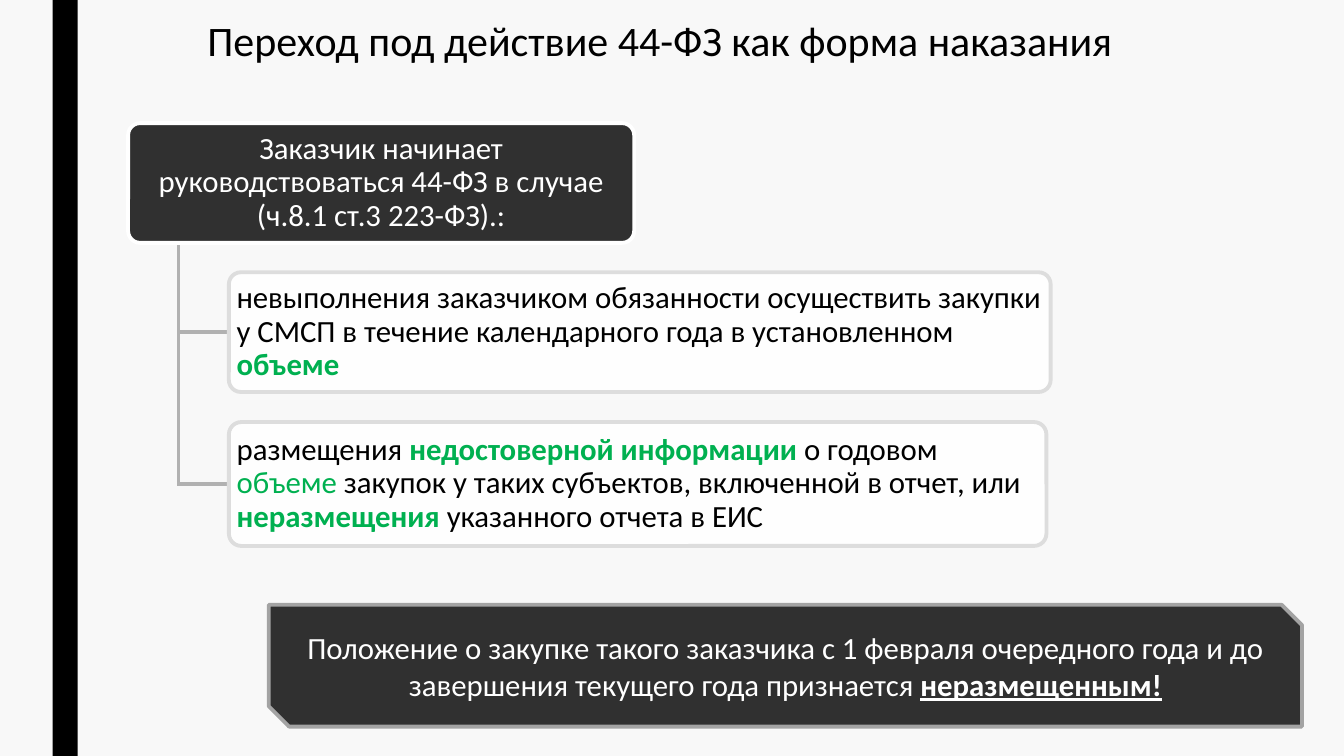
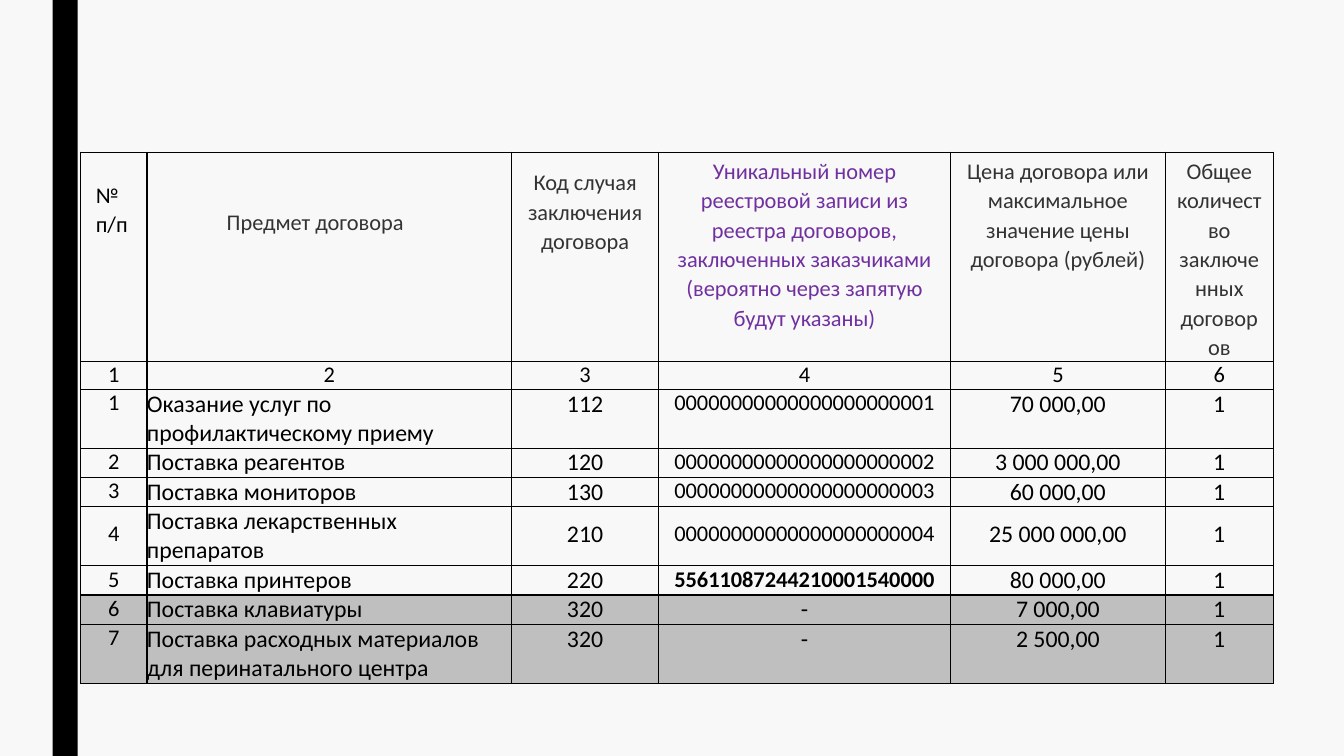
from dataclasses import dataclass

from lxml import etree
from pptx import Presentation
from pptx.dml.color import RGBColor
from pptx.enum.shapes import MSO_CONNECTOR, MSO_SHAPE
from pptx.enum.text import MSO_ANCHOR, PP_ALIGN
from pptx.oxml import parse_xml
from pptx.oxml.ns import nsdecls, qn
from pptx.util import Pt

LEFT, CENTER = PP_ALIGN.LEFT, PP_ALIGN.CENTER
MIDDLE = MSO_ANCHOR.MIDDLE
RECT, ROUNDED, SNIPPED = (MSO_SHAPE.RECTANGLE, MSO_SHAPE.ROUNDED_RECTANGLE,
                          MSO_SHAPE.SNIP_2_DIAG_RECTANGLE)
STRAIGHT = MSO_CONNECTOR.STRAIGHT


@dataclass(frozen=True)
class Theme:
    font: str = "Calibri"
    background: RGBColor = RGBColor(0xF8, 0xF8, 0xF8)
    black: RGBColor = RGBColor(0, 0, 0)
    white: RGBColor = RGBColor(0xFF, 0xFF, 0xFF)
    dark: RGBColor = RGBColor(0x30, 0x30, 0x30)
    case_fill: RGBColor = RGBColor(0xFE, 0xFE, 0xFE)
    case_line: RGBColor = RGBColor(0xDD, 0xDD, 0xDD)
    branch: RGBColor = RGBColor(0xB1, 0xB1, 0xB1)
    note_line: RGBColor = RGBColor(0xA3, 0xA3, 0xA3)
    green: RGBColor = RGBColor(0, 0xB0, 0x50)
    heading: RGBColor = RGBColor(0x33, 0x33, 0x33)
    purple: RGBColor = RGBColor(0x70, 0x30, 0xA0)
    gray_row: RGBColor = RGBColor(0xBF, 0xBF, 0xBF)
    title_size: int = 30
    body_size: int = 22
    cell_size: int = 17
    small_size: int = 16
    line: float = 2.75


theme = Theme()


def add_panel(s, kind, box, fill, line, color, runs, align=LEFT, spacing=0.9):
    """Add a filled shape with text; run marks: g green, b bold, u underlined."""
    sp = s.shapes.add_shape(kind, *(Pt(v) for v in box))
    sp.shadow.inherit = False
    sp.fill.solid()
    sp.fill.fore_color.rgb = fill
    sp.line.color.rgb = line
    sp.line.width = Pt(theme.line)
    tf = sp.text_frame
    tf.word_wrap = True
    tf.vertical_anchor = MIDDLE
    p = tf.paragraphs[0]
    p.alignment = align
    p.line_spacing = spacing
    p.font.name = theme.font
    p.font.size = Pt(theme.body_size)
    for text, marks in runs:
        r = p.add_run()
        r.text = text
        r.font.color.rgb = theme.green if "g" in marks else color
        if "b" in marks:
            r.font.bold = True
        if "u" in marks:
            r.font.underline = True
    if kind == ROUNDED:
        sp.adjustments[0] = 0.1
        tf.margin_left = tf.margin_right = Pt(3)
        tf.margin_top = tf.margin_bottom = Pt(2)
    return sp


def add_borders(cell):
    tc_pr = cell._tc.get_or_add_tcPr()
    for i, side in enumerate(("lnL", "lnR", "lnT", "lnB")):
        tc_pr.insert(i, parse_xml(
            f'<a:{side} {nsdecls("a")} w="{Pt(1)}"><a:solidFill>'
            f'<a:srgbClr val="{theme.black}"/></a:solidFill></a:{side}>'))


prs = Presentation()
prs.slide_width, prs.slide_height = Pt(960), Pt(540)
blank = prs.slide_layouts[6]

# Shared background and band
master = prs.slide_master
master.background.fill.solid()
master.background.fill.fore_color.rgb = theme.background
s = prs.slides.add_slide(blank)
band = s.shapes.add_shape(RECT, Pt(37.5), 0, Pt(18), Pt(540))
band.shadow.inherit = False
band.fill.solid()
band.fill.fore_color.rgb = theme.black
band.line.fill.background()
band.element.nvSpPr.cNvPr.set("id", "100")
master.shapes.element.append(band.element)

# Slide 1: title
tf = s.shapes.add_textbox(Pt(141), Pt(11.5), Pt(819), Pt(58)).text_frame
tf.word_wrap = True
p = tf.paragraphs[0]
p.text = "Переход под действие 44-ФЗ как форма наказания"
p.line_spacing = 0.89
p.font.name = theme.font
p.font.size = Pt(theme.title_size)
p.font.color.rgb = theme.black

# Slide 1: rule and its cases
trunk_x, case_x, rule_bottom = 127.5, 163.5, 173.5
cases = [
    (194.5, 587, 85.5, [
        ("невыполнения заказчиком обязанности осуществить закупки у СМСП "
         "в течение календарного года в установленном ", ""),
        ("объеме", "gb")]),
    (301.5, 584, 88.5, [
        ("размещения ", ""),
        ("недостоверной информации ", "gb"),
        ("о годовом ", ""),
        ("объеме", "g"),
        (" закупок у таких субъектов, включенной в отчет, или ", ""),
        ("неразмещения ", "gb"),
        ("указанного отчета в ЕИС", "")]),
]
last_top, _, last_height, _ = cases[-1]
trunk_bottom = last_top + last_height / 2 + theme.line / 2
branches = [s.shapes.add_connector(STRAIGHT, Pt(trunk_x), Pt(rule_bottom),
                                   Pt(trunk_x), Pt(trunk_bottom))]
for top, width, height, runs in cases:
    middle = top + height / 2
    branch = s.shapes.add_connector(STRAIGHT, Pt(trunk_x), Pt(middle),
                                    Pt(case_x), Pt(middle))
    case = add_panel(s, ROUNDED, (case_x, top, width, height), theme.case_fill,
                     theme.case_line, theme.black, runs)
    branch.end_connect(case, 1)
    branches.append(branch)
for branch in branches:
    branch.line.color.rgb = theme.branch
    branch.line.width = Pt(theme.line)
    etree.SubElement(branch.element.spPr, qn("a:effectLst"))

add_panel(s, ROUNDED, (91.5, 88, 361.5, 85.5), theme.dark, theme.white, theme.white,
          [("Заказчик начинает руководствоваться 44-ФЗ в случае "
            "(ч.8.1 ст.3 223-ФЗ).:", "")], CENTER)
add_panel(s, SNIPPED, (192, 432, 738, 87), theme.dark, theme.note_line, theme.white,
          [("Положение о закупке такого заказчика с 1 февраля очередного года "
            "и до завершения текущего года признается ", ""),
           ("неразмещенным!", "bu")], CENTER, 1.0)

# Slide 2: contract table
s = prs.slides.add_slide(blank)
# Heading, colour, alignment, left, right and top margin
headings = [
    ("№ п/п", theme.black, LEFT, 11, 0, 20),
    ("Предмет договора", theme.heading, LEFT, 57, 0, 39),
    ("Код случая заключения договора", theme.heading, CENTER, 4, 4, 11),
    ("Уникальный номер реестровой записи из реестра договоров, заключенных "
     "заказчиками (вероятно через запятую будут указаны)",
     theme.purple, CENTER, 5, 5, 3),
    ("Цена договора или максимальное значение цены договора (рублей)",
     theme.heading, CENTER, 6, 6, 3),
    ("Общее количество заключенных договоров", theme.heading, CENTER, 7, 7, 3),
]
contracts = [
    ("Оказание услуг по профилактическому приему", "112",
     "00000000000000000000001", "70 000,00"),
    ("Поставка реагентов", "120", "00000000000000000000002", "3 000 000,00"),
    ("Поставка мониторов", "130", "00000000000000000000003", "60 000,00"),
    ("Поставка лекарственных препаратов", "210",
     "00000000000000000000004", "25 000 000,00"),
    ("Поставка принтеров", "220", "55611087244210001540000", "80 000,00"),
    ("Поставка клавиатуры", "320", "-", "7 000,00"),
    ("Поставка расходных материалов для перинатального центра", "320",
     "-", "2 500,00"),
]
rows = [[h[0] for h in headings], [str(n) for n in range(1, 7)]]
rows += [(str(n), *contract, "1") for n, contract in enumerate(contracts, 1)]
col_widths = [47.5, 260.5, 105, 208.5, 153.5, 77]
row_heights = [149, 20, 42, 21, 21, 42, 21, 21, 42]
centered_row, bold_row, first_gray_row = 5, 6, 7
name_col, number_col = 1, 3

table = s.shapes.add_table(len(rows), len(col_widths), Pt(57.5), Pt(108.7),
                           Pt(sum(col_widths)), Pt(sum(row_heights))).table
table.first_row = table.horz_banding = False
for column, width in zip(table.columns, col_widths):
    column.width = Pt(width)
for i, (row, height) in enumerate(zip(rows, row_heights)):
    table.rows[i].height = Pt(height)
    for j, text in enumerate(row):
        color, align, left, right, top = theme.black, CENTER, 0, 0, 0
        size = theme.cell_size
        if i < 2 or j == 0 or (j == number_col and text != "-"):
            size = theme.small_size
        if i == 0:
            color, align, left, right, top = headings[j][1:]
        elif i > 1 and j == name_col:
            align, right = LEFT, 15
        elif i == centered_row:
            top = 9.4
        cell = table.cell(i, j)
        cell.margin_left, cell.margin_right = Pt(left), Pt(right)
        cell.margin_top, cell.margin_bottom = Pt(top), 0
        if i >= first_gray_row:
            cell.fill.solid()
            cell.fill.fore_color.rgb = theme.gray_row
        else:
            cell.fill.background()
        add_borders(cell)
        p = cell.text_frame.paragraphs[0]
        p.text = text
        p.alignment = align
        p.line_spacing = 1.07 if i == 0 else 1.0
        p.font.name = theme.font
        p.font.size = Pt(size)
        p.font.bold = i == bold_row and j == number_col
        p.font.color.rgb = color

prs.save("out.pptx")
